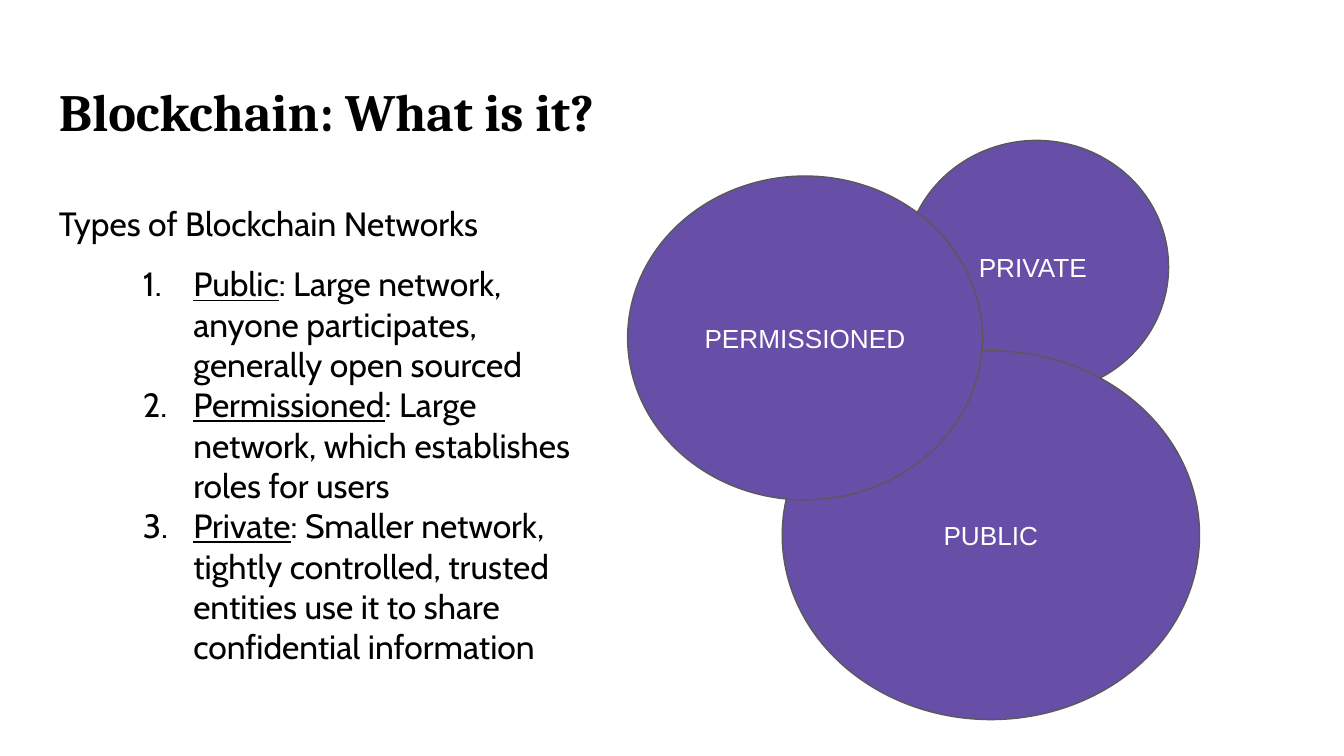
"""Builds a slide on the types of blockchain networks."""
from lxml import etree
from pptx import Presentation
from pptx.dml.color import RGBColor
from pptx.enum.shapes import MSO_SHAPE
from pptx.enum.text import MSO_ANCHOR, PP_ALIGN
from pptx.oxml.ns import qn
from pptx.util import Emu, Pt

OVAL = MSO_SHAPE.OVAL
TOP, MIDDLE, BOTTOM = MSO_ANCHOR.TOP, MSO_ANCHOR.MIDDLE, MSO_ANCHOR.BOTTOM
CENTER = PP_ALIGN.CENTER

BLACK = RGBColor(0x00, 0x00, 0x00)
WHITE = RGBColor(0xFF, 0xFF, 0xFF)
PURPLE = RGBColor(0x67, 0x4E, 0xA7)
GRAY = RGBColor(0x59, 0x59, 0x59)

EMU_PER_PX = 4572
SLIDE_SIZE = (2000, 1125)
INSET = 20
LIST_INDENT = 200
NUMBER_HANG = 75

TITLE_FONT = {"name": "Cambria", "size": Pt(28), "bold": True}
BODY_FONT = {"name": "Cabin", "size": Pt(18)}
LABEL_FONT = {"name": "Arial", "size": Pt(14)}

NETWORK_TYPES = [
    ("Public", ": Large network, anyone participates, generally open sourced"),
    ("Permissioned", ": Large network, which establishes roles for users"),
    ("Private", ": Smaller network, tightly controlled, trusted entities "
                "use it to share confidential information"),
]
NETWORK_CIRCLES = [
    ("PRIVATE ", (1346, 209, 393, 377)),
    ("PUBLIC", (1164, 522, 621, 549)),
    ("PERMISSIONED", (934, 262, 528, 482)),
]


def px(length):
    """Convert px to EMU."""
    return Emu(length * EMU_PER_PX)


def set_attributes(target, values):
    """Set each named attribute on the target."""
    for name, value in values.items():
        setattr(target, name, value)


def format_frame(text_frame, anchor):
    """Set wrapping, anchor and insets of a text frame."""
    set_attributes(text_frame, {
        "word_wrap": True,
        "vertical_anchor": anchor,
        "margin_left": px(INSET),
        "margin_top": px(INSET),
        "margin_right": px(INSET),
        "margin_bottom": px(INSET),
    })


def add_run(paragraph, text, font, color, underline=False):
    """Add a formatted run to a paragraph."""
    run = paragraph.add_run()
    run.text = text
    set_attributes(run.font, font)
    run.font.underline = underline
    run.font.color.rgb = color


def number_paragraph(paragraph):
    """Give a paragraph a hanging automatic number."""
    properties = paragraph._p.get_or_add_pPr()
    properties.set("marL", str(px(LIST_INDENT)))
    properties.set("indent", str(-px(NUMBER_HANG)))
    etree.SubElement(properties, qn("a:buAutoNum"), type="arabicPeriod")


def add_text_frame(slide, box, anchor):
    """Add a text box and return its text frame."""
    text_frame = slide.shapes.add_textbox(*map(px, box)).text_frame
    format_frame(text_frame, anchor)
    return text_frame


def add_title(slide):
    """Add the slide title."""
    text_frame = add_text_frame(slide, (68, 98, 1864, 126), TOP)
    add_run(text_frame.paragraphs[0], "Blockchain: What is it?", TITLE_FONT, BLACK)


def add_network_list(slide):
    """Add the heading and the numbered network types."""
    text_frame = add_text_frame(slide, (68, 222, 846, 790), BOTTOM)
    heading = text_frame.paragraphs[0]
    heading.space_after = Pt(11)
    add_run(heading, "Types of Blockchain Networks", BODY_FONT, BLACK)
    for term, description in NETWORK_TYPES:
        paragraph = text_frame.add_paragraph()
        number_paragraph(paragraph)
        add_run(paragraph, term, BODY_FONT, BLACK, underline=True)
        add_run(paragraph, description, BODY_FONT, BLACK)


def add_network_circle(slide, label, box):
    """Add a labelled network circle."""
    shape = slide.shapes.add_shape(OVAL, *map(px, box))
    shape.shadow.inherit = False
    shape.fill.solid()
    shape.fill.fore_color.rgb = PURPLE
    shape.line.color.rgb = GRAY
    shape.line.width = Pt(0.75)
    format_frame(shape.text_frame, MIDDLE)
    paragraph = shape.text_frame.paragraphs[0]
    paragraph.alignment = CENTER
    add_run(paragraph, label, LABEL_FONT, WHITE)


def main():
    """Build and save the slide."""
    presentation = Presentation()
    presentation.slide_width, presentation.slide_height = map(px, SLIDE_SIZE)
    slide = presentation.slides.add_slide(presentation.slide_layouts[6])
    add_title(slide)
    add_network_list(slide)
    for label, box in NETWORK_CIRCLES:
        add_network_circle(slide, label, box)
    presentation.save("out.pptx")


if __name__ == "__main__":
    main()
